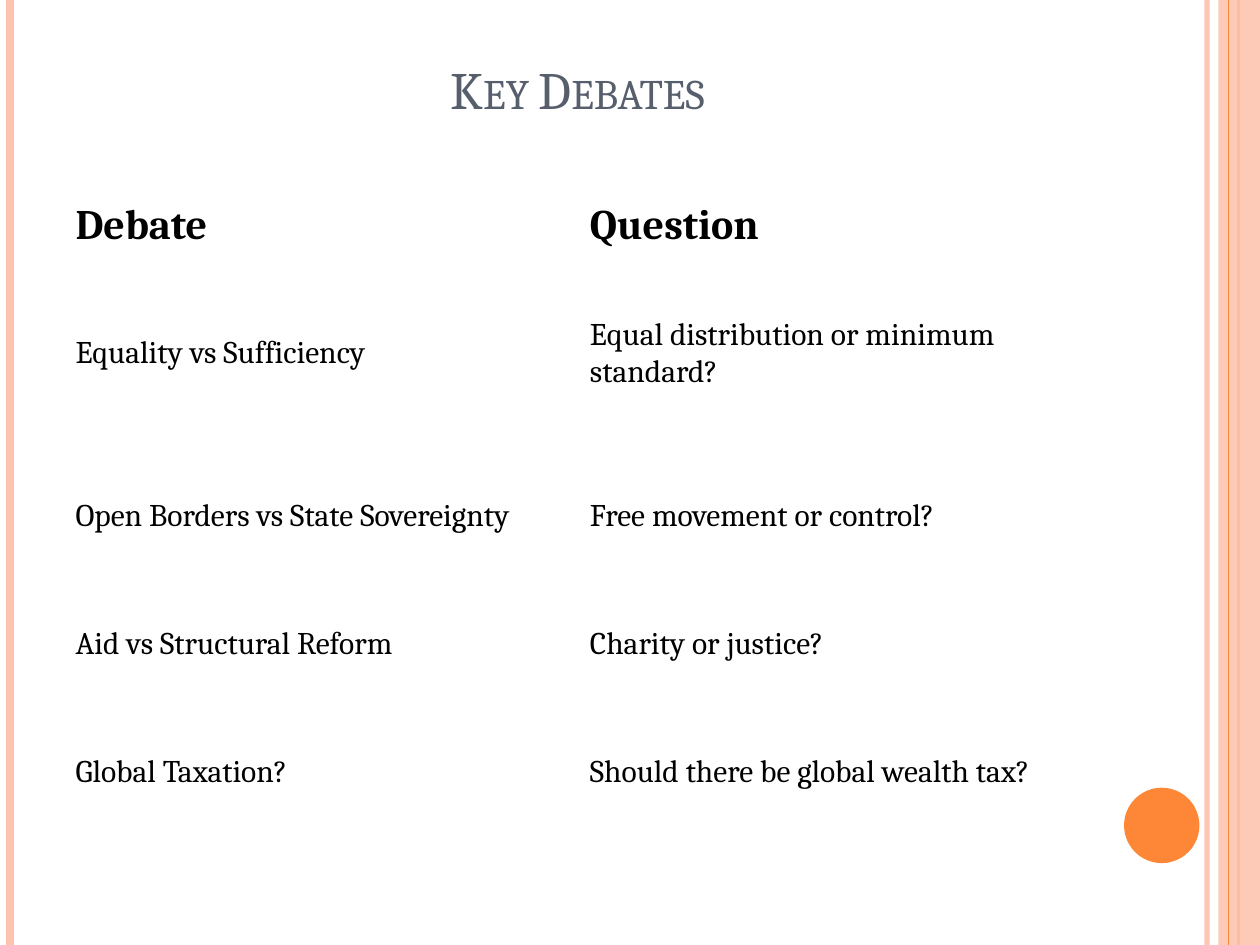
from lxml.etree import SubElement
from pptx import Presentation
from pptx.dml.color import RGBColor
from pptx.enum.shapes import MSO_CONNECTOR, MSO_SHAPE
from pptx.enum.text import MSO_ANCHOR, PP_ALIGN
from pptx.oxml.ns import qn
from pptx.util import Cm, Pt

PEACH = RGBColor(0xFE, 0xC3, 0xAE)
ORANGE = RGBColor(0xFE, 0x86, 0x37)
SLATE = RGBColor(0x57, 0x5F, 0x6D)
BLACK = RGBColor(0, 0, 0)

WIDTH, HEIGHT = 25.4, 19.05
LEFT, CONTENT_WIDTH = 1.27, 20.74
HEADER_HEIGHT, ROW_HEIGHT = 1.88, 3.28

DEBATES = [
    ("Debate", "Question"),
    ("Equality vs Sufficiency", "Equal distribution or minimum standard?"),
    ("Open Borders vs State Sovereignty", "Free movement or control?"),
    ("Aid vs Structural Reform", "Charity or justice?"),
    ("Global Taxation?", "Should there be global wealth tax?"),
]
ROW_HEIGHTS = [HEADER_HEIGHT, ROW_HEIGHT, ROW_HEIGHT, HEADER_HEIGHT, ROW_HEIGHT]


def set_alpha(element, percent):
    """Make the solid colour inside the element partly transparent."""
    colour = next(element.iter(qn("a:srgbClr")))
    SubElement(colour, qn("a:alpha"), val=str(percent * 1000))


class DebateSlide:
    font_name = "Cambria"

    def __init__(self, slide):
        self.slide = slide

    def style(self, paragraph, size, colour, bold=False):
        font = paragraph.font
        font.name, font.size, font.bold = self.font_name, Pt(size), bold
        font.color.rgb = colour

    def stripe(self, x, weight, colour, opacity=100):
        """Draw a vertical line over the full slide height."""
        stripe = self.slide.shapes.add_connector(
            MSO_CONNECTOR.STRAIGHT, Cm(x), Cm(0), Cm(x), Cm(HEIGHT))
        stripe.line.width = Pt(weight)
        stripe.line.color.rgb = colour
        properties = stripe._element.spPr
        SubElement(properties, qn("a:effectLst"))
        if opacity < 100:
            set_alpha(properties, opacity)

    def shape(self, kind, left, top, width, height, colour, opacity=100):
        shape = self.slide.shapes.add_shape(
            kind, Cm(left), Cm(top), Cm(width), Cm(height))
        shape.shadow.inherit = False
        shape.fill.solid()
        shape.fill.fore_color.rgb = colour
        shape.line.fill.background()
        if opacity < 100:
            set_alpha(shape._element.spPr, opacity)

    def title(self, text, top, height):
        frame = self.slide.shapes.add_textbox(
            Cm(LEFT), Cm(top), Cm(CONTENT_WIDTH), Cm(height)).text_frame
        frame.word_wrap = True
        frame.vertical_anchor = MSO_ANCHOR.BOTTOM
        heading = frame.paragraphs[0]
        heading.alignment = PP_ALIGN.CENTER
        run = heading.add_run()
        run.text = text
        run._r.get_or_add_rPr().set("cap", "small")
        self.style(heading, 30, SLATE)

    def table(self, rows, heights, top):
        table = self.slide.shapes.add_table(
            len(rows), len(rows[0]), Cm(LEFT), Cm(top),
            Cm(CONTENT_WIDTH), Cm(sum(heights))).table
        table.first_row = table.horz_banding = False
        for r, (texts, height) in enumerate(zip(rows, heights)):
            table.rows[r].height = Cm(height)
            is_header = r == 0
            for c, text in enumerate(texts):
                cell = table.cell(r, c)
                cell.text = text
                cell.fill.background()
                cell.vertical_anchor = MSO_ANCHOR.MIDDLE
                self.style(cell.text_frame.paragraphs[0],
                           24 if is_header else 18, BLACK, is_header)


def main():
    presentation = Presentation()
    presentation.slide_width, presentation.slide_height = Cm(WIDTH), Cm(HEIGHT)
    debates = DebateSlide(presentation.slides.add_slide(presentation.slide_layouts[6]))

    debates.stripe(24.33, 3, PEACH, opacity=93)
    debates.stripe(0.2, 4.5, PEACH)
    debates.stripe(24.97, 1.5, ORANGE)
    debates.shape(MSO_SHAPE.RECTANGLE, 24.56, 0, 0.84, HEIGHT, PEACH, opacity=87)
    debates.stripe(24.77, 0.75, ORANGE)
    debates.shape(MSO_SHAPE.OVAL, 22.66, 15.88, 1.52, 1.52, ORANGE)

    debates.title("Key Debates", 0.76, 1.78)
    debates.table(DEBATES, ROW_HEIGHTS, 3.61)
    presentation.save("out.pptx")


if __name__ == "__main__":
    main()
